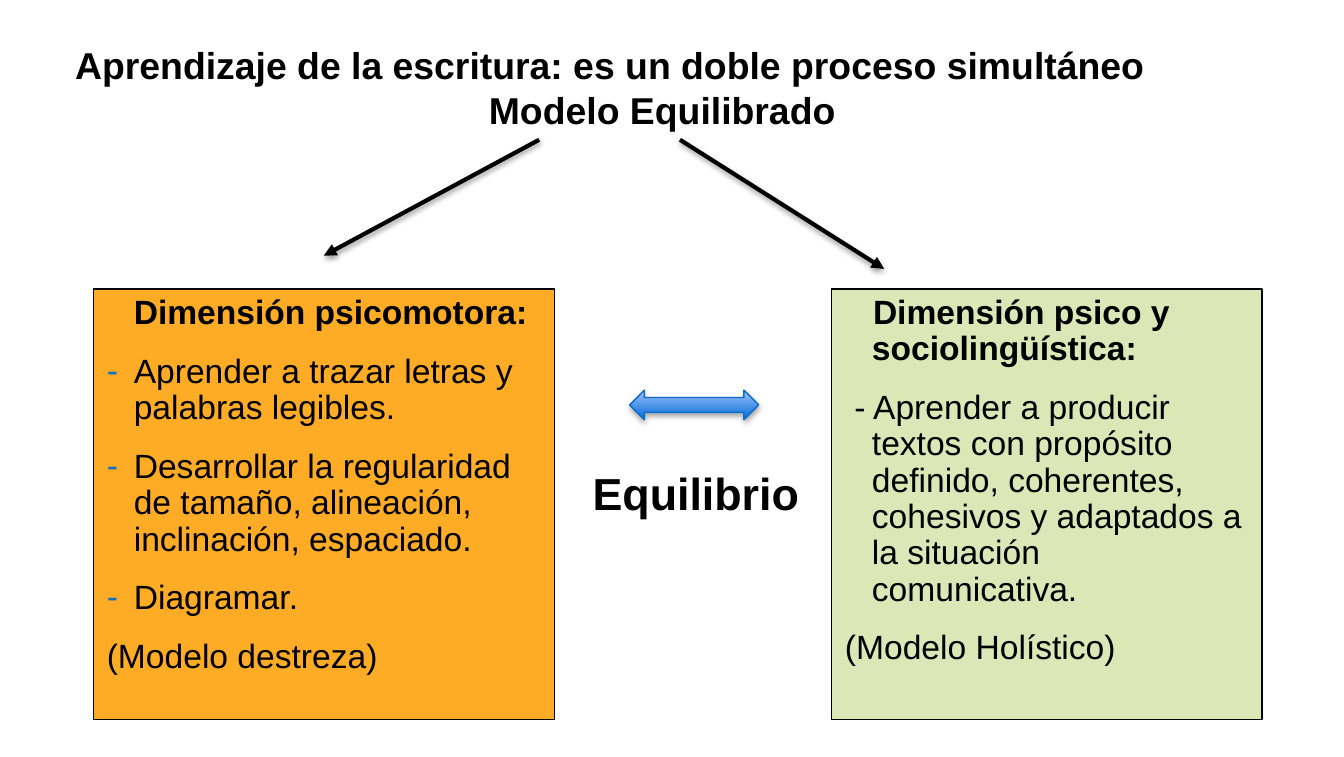
from lxml import etree
from pptx import Presentation
from pptx.dml.color import RGBColor
from pptx.enum.shapes import MSO_CONNECTOR, MSO_SHAPE
from pptx.enum.text import MSO_ANCHOR, PP_ALIGN
from pptx.oxml.ns import qn
from pptx.util import Cm, Pt

LINE = MSO_CONNECTOR.STRAIGHT
RECT = MSO_SHAPE.RECTANGLE
DOUBLE = MSO_SHAPE.LEFT_RIGHT_ARROW
TOP = MSO_ANCHOR.TOP
LEFT = PP_ALIGN.LEFT

FONT = "Arial"
INK = {
    "text": "000000", "dash": "0F6FC6",
    "motor": "FEAB25", "social": "DBE7B6",
    "deep": "0070D5", "pale": "A3BDFF", "edge": "0A6DC6",
}
HANG = 0.51  # left margin of the panel text, cm


def color(name):
    return RGBColor.from_string(INK[name])


def place(box):
    return [Cm(v) for v in box]


def node(parent, tag, **attrs):
    return etree.SubElement(parent, qn(tag), attrs)


def stroke(shape, name, width):
    shape.line.color.rgb = color(name)
    shape.line.width = Pt(width)


def shade(shape, alpha, dist):
    """Soft shadow straight below; alpha in percent, dist in points."""
    props = shape.element.spPr
    for old in props.findall(qn("a:effectLst")):
        props.remove(old)
    drop = node(node(props, "a:effectLst"), "a:outerShdw", blurRad=str(Pt(3.1)),
                dist=str(Pt(dist)), dir="5400000", rotWithShape="0")
    ink = node(drop, "a:srgbClr", val=INK["text"])
    node(ink, "a:alpha", val=str(alpha * 1000))


def style(para, size, bold):
    para.alignment = LEFT
    for run in para.runs:
        font = run.font
        font.name, font.size, font.bold = FONT, Pt(size), bold
        font.color.rgb = color("text")


def indent(para, left, first):
    props = para._p.get_or_add_pPr()
    props.set("marL", str(Cm(left)))
    props.set("indent", str(Cm(first)))
    return props


def label(slide, box, lines, size):
    """Bold text box; returns its paragraphs."""
    frame = slide.shapes.add_textbox(*place(box)).text_frame
    frame.word_wrap = True
    frame.text = "\n".join(lines)
    for para in frame.paragraphs:
        style(para, size, True)
    return frame.paragraphs


def title(slide, box):
    lines = ["Aprendizaje de la escritura: es un doble proceso simultáneo",
             "Modelo Equilibrado"]
    paras = label(slide, box, lines, 20)
    indent(paras[1], 7.82, 0)


def branches(slide, box):
    """Two arrows that part from the title towards the panels."""
    x, y, w, h = box
    for start, end, drop in ((4.07, 0, 2.19), (6.73, w, h)):
        ends = place((x + start, y, x + end, y + drop))
        arrow = slide.shapes.add_connector(LINE, *ends)
        stroke(arrow, "text", 2.25)
        node(arrow.line._get_or_add_ln(), "a:tailEnd", type="triangle")
        shade(arrow, 38, 1.6)


def panel(slide, box, fill, items):
    """Filled box; items are (text, first-line indent, bold, dashed)."""
    shape = slide.shapes.add_shape(RECT, *place(box))
    shape.shadow.inherit = False
    shape.fill.solid()
    shape.fill.fore_color.rgb = color(fill)
    stroke(shape, "text", 0.75)
    frame = shape.text_frame
    frame.word_wrap = True
    frame.vertical_anchor = TOP
    frame.text = "\n".join(item[0] for item in items)
    for para, (_, first, bold, dashed) in zip(frame.paragraphs, items):
        style(para, 18, bold)
        para.line_spacing = 0.9
        para.space_before = Pt(12)
        props = indent(para, HANG, first)
        if dashed:
            node(node(props, "a:buClr"), "a:srgbClr", val=INK["dash"])
            node(props, "a:buFont", typeface=FONT)
            node(props, "a:buChar", char="-")


def balance(slide, box):
    """Double arrow above its caption."""
    x, y, w, h = box
    arrow = slide.shapes.add_shape(DOUBLE, *place((x + 0.95, y, 2.44, 0.56)))
    arrow.fill.gradient()
    arrow.fill.gradient_angle = 90
    for stop, name in zip(arrow.fill.gradient_stops, ("deep", "pale")):
        stop.color.rgb = color(name)
    stroke(arrow, "edge", 0.75)
    shade(arrow, 35, 1.8)
    label(slide, (x, y + 1.3, w, h - 1.3), ["Equilibrio"], 24)


def main():
    deck = Presentation()
    deck.slide_width, deck.slide_height = Cm(25.4), Cm(14.3)
    slide = deck.slides.add_slide(deck.slide_layouts[6])

    title(slide, (1.17, 0.67, 23.19, 1.96))
    branches(slide, (6.12, 2.64, 10.59, 2.44))
    panel(slide, (1.77, 5.46, 8.71, 8.13), "motor", [
        ("Dimensión psicomotora:", 0, True, False),
        ("Aprender a trazar letras y palabras legibles.", -HANG, False, True),
        ("Desarrollar la regularidad de tamaño, alineación, "
         "inclinación, espaciado.", -HANG, False, True),
        ("Diagramar.", -HANG, False, True),
        ("(Modelo destreza)", -HANG, False, False),
    ])
    panel(slide, (15.72, 5.46, 8.13, 8.13), "social", [
        ("Dimensión psico y sociolingüística:", 0.02, True, False),
        ("- Aprender a producir textos con propósito definido, coherentes, "
         "cohesivos y adaptados a la situación comunicativa.",
         -0.33, False, False),
        ("(Modelo Holístico)", -HANG, False, False),
    ])
    balance(slide, (10.95, 7.37, 5.26, 2.6))
    deck.save("out.pptx")


if __name__ == "__main__":
    main()
